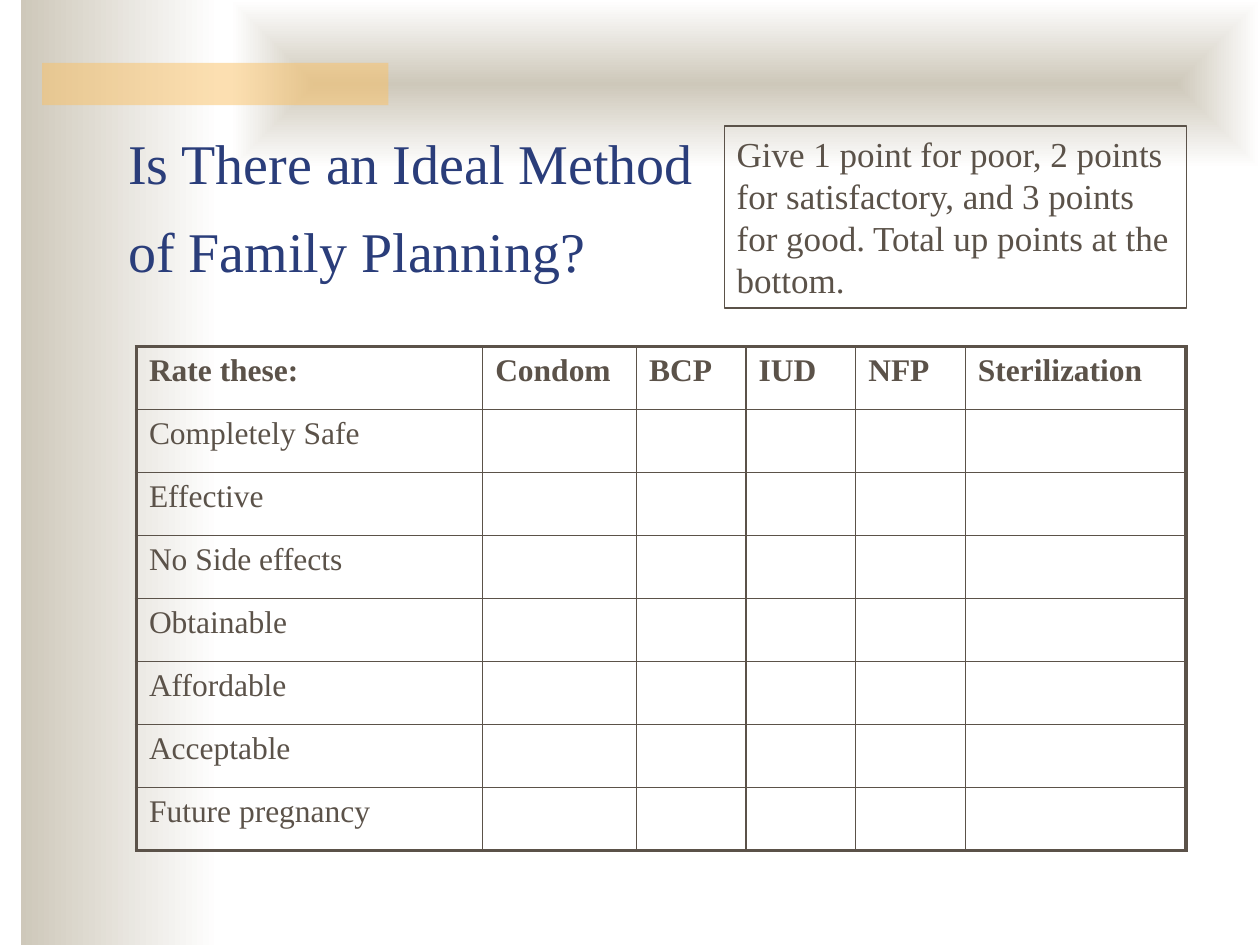
from lxml import etree
from pptx import Presentation
from pptx import util as u
from pptx.dml.color import RGBColor
from pptx.enum import shapes, text
from pptx.oxml import parse_xml
from pptx.oxml.ns import nsdecls, qn

FONT = "Times New Roman"
INK, NAVY, SAND, WHITE, AMBER = "5B5249", "2A3D7A", "CEC8BA", "FFFFFF", "FAC164"
HEADINGS = ["Rate these:", "Condom", "BCP", "IUD", "NFP", "Sterilization"]
CRITERIA = ["Completely Safe", "Effective", "No Side effects", "Obtainable",
            "Affordable", "Acceptable", "Future pregnancy"]
COLUMN_WIDTHS = [6.98, 3.1, 2.21, 2.21, 2.21, 4.45]


def colour(value):
    """Turn a hex string into a colour."""
    return RGBColor.from_string(value)


def style(run, size, ink, bold=False):
    """Give a run its font, size, colour and weight."""
    run.font.name, run.font.size, run.font.bold = FONT, u.Pt(size), bold
    run.font.color.rgb = colour(ink)


def add_panel(slide, box):
    """Add a plain rectangle without line or shadow."""
    panel = slide.shapes.add_shape(shapes.MSO_SHAPE.RECTANGLE, *map(u.Cm, box))
    panel.shadow.inherit = False
    panel.line.fill.background()
    return panel


def shade(panel):
    """Fill a panel with a gradient from sand to white."""
    panel.fill.gradient()
    panel.fill.gradient_angle = 0
    for stop, value in zip(panel.fill.gradient_stops, (SAND, WHITE)):
        stop.color.rgb = colour(value)


def add_backdrop(slide, width, height):
    """Place the side band, the top glow and the amber bar."""
    shade(add_panel(slide, (0.42, 0, 4.02, height)))

    glow = add_panel(slide, (4.66, 0, width - 4.66, 3.39))
    shade(glow)
    linear = glow._element.spPr.find(qn("a:gradFill")).find(qn("a:lin"))
    linear.getparent().replace(linear, parse_xml(
        f'<a:path {nsdecls("a")} path="shape">'
        '<a:fillToRect l="50000" t="50000" r="50000" b="50000"/></a:path>'))

    bar = add_panel(slide, (0.85, 1.27, 6.98, 0.85))
    bar.fill.solid()
    bar.fill.fore_color.rgb = colour(AMBER)
    tint = bar._element.spPr.find(qn("a:solidFill"))[0]
    etree.SubElement(tint, qn("a:alpha")).set("val", "50000")


def place_title(slide, box):
    """Move and format the title, in front of the backdrop."""
    title = slide.shapes.title
    slide.shapes._spTree.append(title._element)
    title.left, title.top, title.width, title.height = map(u.Cm, box)
    frame = title.text_frame
    frame.text = "Is There an Ideal Method of Family Planning?"
    frame.word_wrap = True
    frame.auto_size = text.MSO_AUTO_SIZE.NONE
    frame.vertical_anchor = text.MSO_ANCHOR.BOTTOM
    heading = frame.paragraphs[0]
    heading.alignment = text.PP_ALIGN.LEFT
    style(heading.runs[0], 32, NAVY)
    line_end = heading.add_run()
    line_end.text = " "
    style(line_end, 44, NAVY)


def set_borders(cell, widths):
    """Draw the left, right, top and bottom borders of a cell."""
    properties = cell._tc.get_or_add_tcPr()
    for position, (side, width) in enumerate(zip("LRTB", widths)):
        properties.insert(position, parse_xml(
            f'<a:ln{side} {nsdecls("a")} w="{u.Pt(width)}"><a:solidFill>'
            f'<a:srgbClr val="{INK}"/></a:solidFill></a:ln{side}>'))


def add_rating_table(slide, left, top, row_height):
    """Add the grid of criteria against methods."""
    rows = [HEADINGS] + [[name] + [""] * (len(HEADINGS) - 1) for name in CRITERIA]
    last_row, last_column = len(rows) - 1, len(HEADINGS) - 1
    ratings = slide.shapes.add_table(
        len(rows), len(HEADINGS), u.Cm(left), u.Cm(top),
        u.Cm(sum(COLUMN_WIDTHS)), u.Cm(row_height * len(rows))).table
    ratings.first_row = ratings.horz_banding = False
    for column, width in zip(ratings.columns, COLUMN_WIDTHS):
        column.width = u.Cm(width)
    for r, row in enumerate(rows):
        for c, label in enumerate(row):
            cell = ratings.cell(r, c)
            cell.fill.background()
            outer = (c == 0, c == last_column, r == 0, r == last_row)
            set_borders(cell, [2.25 if edge else 1 for edge in outer])
            if label:
                cell.text_frame.text = label
                style(cell.text_frame.paragraphs[0].runs[0], 18, INK, bold=r == 0)


def add_scoring_note(slide, box):
    """Add the outlined scoring instructions."""
    note = add_panel(slide, box)
    note.fill.background()
    note.line.color.rgb = colour(INK)
    note.line.width = u.Pt(0.75)
    frame = note.text_frame
    frame.text = ("Give 1 point for poor, 2 points for satisfactory, and 3 points "
                  "for good. Total up points at the bottom.")
    frame.word_wrap = True
    frame.vertical_anchor = text.MSO_ANCHOR.TOP
    scoring = frame.paragraphs[0]
    scoring.alignment = text.PP_ALIGN.LEFT
    scoring.line_spacing = u.Pt(24)
    style(scoring.runs[0], 20, INK)


def main():
    """Build and save the slide."""
    deck = Presentation()
    deck.slide_width, deck.slide_height = u.Cm(25.4), u.Cm(19.05)
    slide = deck.slides.add_slide(deck.slide_layouts[5])
    add_backdrop(slide, 25.4, 19.05)
    place_title(slide, (2.33, 2.54, 12.07, 3.39))
    add_rating_table(slide, 2.75, 6.99, 1.27)
    add_scoring_note(slide, (14.6, 2.54, 9.32, 3.67))
    deck.save("out.pptx")


if __name__ == "__main__":
    main()
